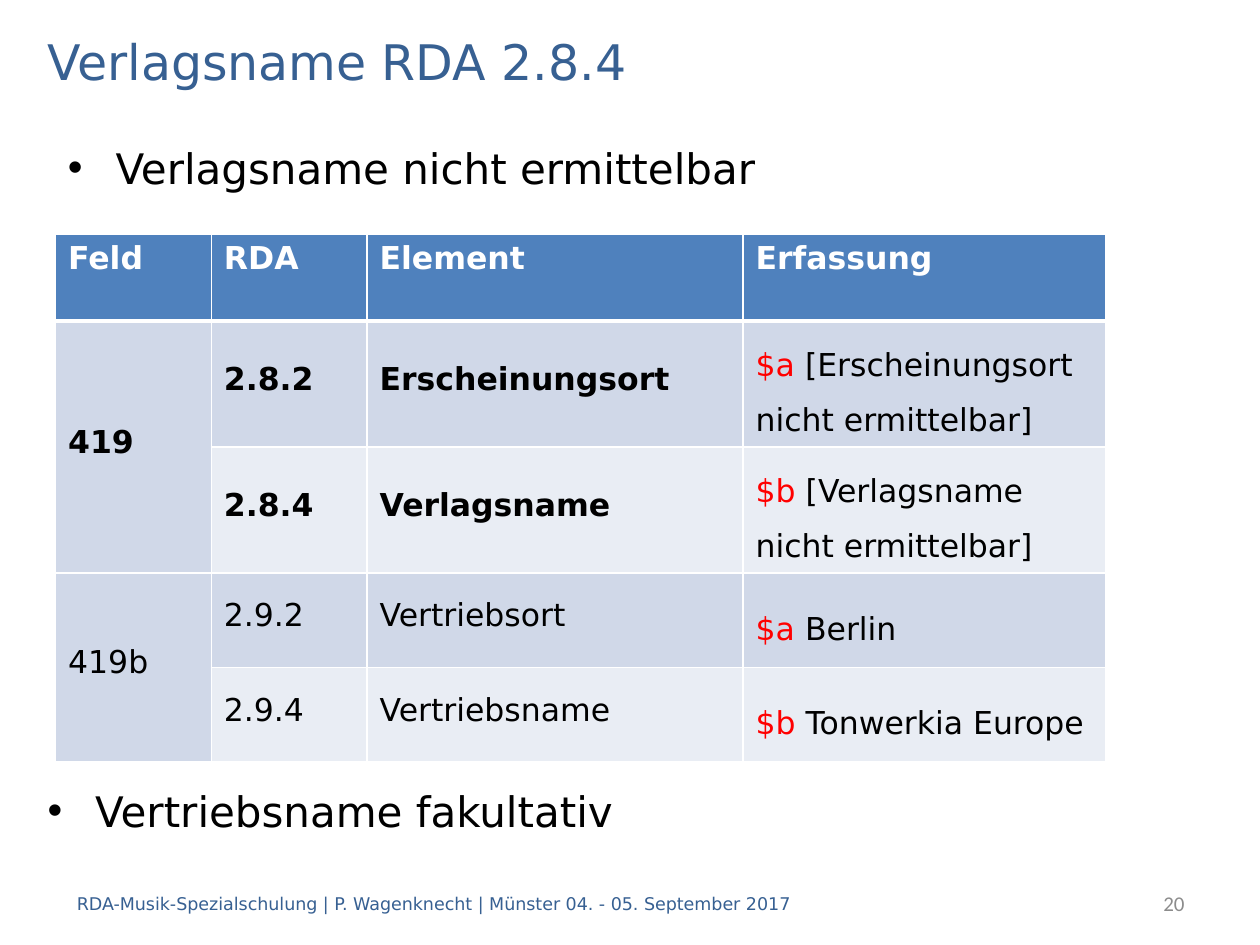
import pptx
import pptx.util
import pptx.oxml
import pptx.oxml.ns
import pptx.dml.color
import pptx.enum.text
import lxml.etree

Cm, Pt = pptx.util.Cm, pptx.util.Pt
ANCHOR, ALIGN = pptx.enum.text.MSO_ANCHOR, pptx.enum.text.PP_ALIGN

COLORS = {"blue": "376092", "black": "000000", "white": "FFFFFF", "grey": "8C8C8C",
          "red": "FF0000", "head": "4F81BD", "band1": "D0D8E8", "band2": "E9EDF4"}
FONT = "DejaVu Sans"

# text, (left, top, width, height) in cm, run format, frame format, other options
TEXTS = [
    ("Verlagsname RDA 2.8.4", (0.71, 0.51, 24, 1.42),
     {"size": 28, "color": "blue"}, {"vertical_anchor": ANCHOR.MIDDLE}, {}),
    ("Vertriebsname fakultativ", (0.71, 13.34, 24, 3.4),
     {"size": 24}, {"margin_top": Cm(2.49)}, {"bullet": True}),
    ("RDA-Musik-Spezialschulung | P. Wagenknecht | Münster 04. - 05. September 2017",
     (1.3, 17.7, 21.2, 1.02),
     {"size": 10, "color": "blue"}, {"vertical_anchor": ANCHOR.MIDDLE}, {}),
    ("20", (20.1, 17.7, 4.03, 1.02), {"size": 12, "color": "grey", "name": "Calibri"},
     {"vertical_anchor": ANCHOR.MIDDLE}, {"align": ALIGN.RIGHT}),
    ("Verlagsname nicht ermittelbar", (1.12, 2.74, 24, 1.8),
     {"size": 24}, {}, {"bullet": True}),
]

HEADER = ["Feld", "RDA", "Element", "Erfassung"]
# field, bold, [(RDA number, element, subfield, entry)]
GROUPS = [
    ("419", True, [
        ("2.8.2", "Erscheinungsort", "$a", " [Erscheinungsort nicht ermittelbar]"),
        ("2.8.4", "Verlagsname", "$b", " [Verlagsname nicht ermittelbar]")]),
    ("419b", False, [
        ("2.9.2", "Vertriebsort", "$a", " Berlin"),
        ("2.9.4", "Vertriebsname", "$b", " Tonwerkia Europe")]),
]
TABLE_POS = (1.12, 4.72)
COL_WIDTHS = [3.14, 3.14, 7.58, 7.32]
ROW_HEIGHTS = [1.75, 2.46, 2.46, 1.9, 1.9]


def rgb(name):
    return pptx.dml.color.RGBColor.from_string(COLORS[name])


def add_run(p, text, size=18, color="black", name=FONT, bold=False):
    r = p.add_run()
    r.text = text
    for key, value in {"size": Pt(size), "name": name, "bold": bold}.items():
        setattr(r.font, key, value)
    r.font.color.rgb = rgb(color)


def add_bullet(p):
    pPr = p._p.get_or_add_pPr()
    pPr.set("marL", str(Cm(0.96)))
    pPr.set("indent", str(-Cm(0.96)))
    for tag, key, value in [("a:buFont", "typeface", "Arial"), ("a:buChar", "char", "•")]:
        lxml.etree.SubElement(pPr, pptx.oxml.ns.qn(tag)).set(key, value)


def add_text(slide, text, box, run_format, frame_format, options):
    tf = slide.shapes.add_textbox(*map(Cm, box)).text_frame
    for key, value in {"word_wrap": True, **frame_format}.items():
        setattr(tf, key, value)
    p = tf.paragraphs[0]
    p.alignment = options.get("align", ALIGN.LEFT)
    if options.get("bullet"):
        add_bullet(p)
    add_run(p, text, **run_format)


def style_cell(cell, fill, bottom=1):
    """Draw white borders and the fill; bottom is the lower border in points."""
    tcPr = cell._tc.get_or_add_tcPr()
    for side, width in {"L": 1, "R": 1, "T": 1, "B": bottom}.items():
        tcPr.append(pptx.oxml.parse_xml(
            f'<a:ln{side} {pptx.oxml.ns.nsdecls("a")} w="{Pt(width)}"><a:solidFill>'
            f'<a:srgbClr val="{COLORS["white"]}"/></a:solidFill></a:ln{side}>'))
    cell.fill.solid()
    cell.fill.fore_color.rgb = rgb(fill)


def fill_cell(cell, runs, spacing):
    cell.vertical_anchor = ANCHOR.MIDDLE
    p = cell.text_frame.paragraphs[0]
    for key, value in {"line_spacing": spacing, "space_before": Pt(6),
                       "space_after": Pt(6)}.items():
        setattr(p, key, value)
    for text, run_format in runs:
        add_run(p, text, **run_format)


def add_element_table(slide):
    table = slide.shapes.add_table(
        len(ROW_HEIGHTS), len(COL_WIDTHS), *map(Cm, TABLE_POS),
        Cm(sum(COL_WIDTHS)), Cm(sum(ROW_HEIGHTS))).table
    for column, width in zip(table.columns, COL_WIDTHS):
        column.width = Cm(width)
    for row, height in zip(table.rows, ROW_HEIGHTS):
        row.height = Cm(height)

    for col, text in enumerate(HEADER):
        style_cell(table.cell(0, col), "head", bottom=3)
        add_run(table.cell(0, col).text_frame.paragraphs[0], text,
                color="white", bold=True)

    row = 1
    for field, bold, entries in GROUPS:
        first = table.cell(row, 0)
        first.merge(table.cell(row + len(entries) - 1, 0))
        fill_cell(first, [(field, {"bold": bold})], Pt(16))
        for number, element, subfield, entry in entries:
            band = "band1" if row % 2 else "band2"
            for col in range(len(HEADER)):
                style_cell(table.cell(row, col), band if col else "band1")
            for col, text in enumerate((number, element), 1):
                fill_cell(table.cell(row, col), [(text, {"bold": bold})], Pt(16))
            fill_cell(table.cell(row, 3), [(subfield, {"color": "red"}), (entry, {})], 1.5)
            row += 1


def main():
    prs = pptx.Presentation()
    prs.slide_width, prs.slide_height = Cm(25.4), Cm(19.05)
    slide = prs.slides.add_slide(prs.slide_layouts[6])
    for item in TEXTS:
        add_text(slide, *item)
    add_element_table(slide)
    prs.save("out.pptx")


if __name__ == "__main__":
    main()
